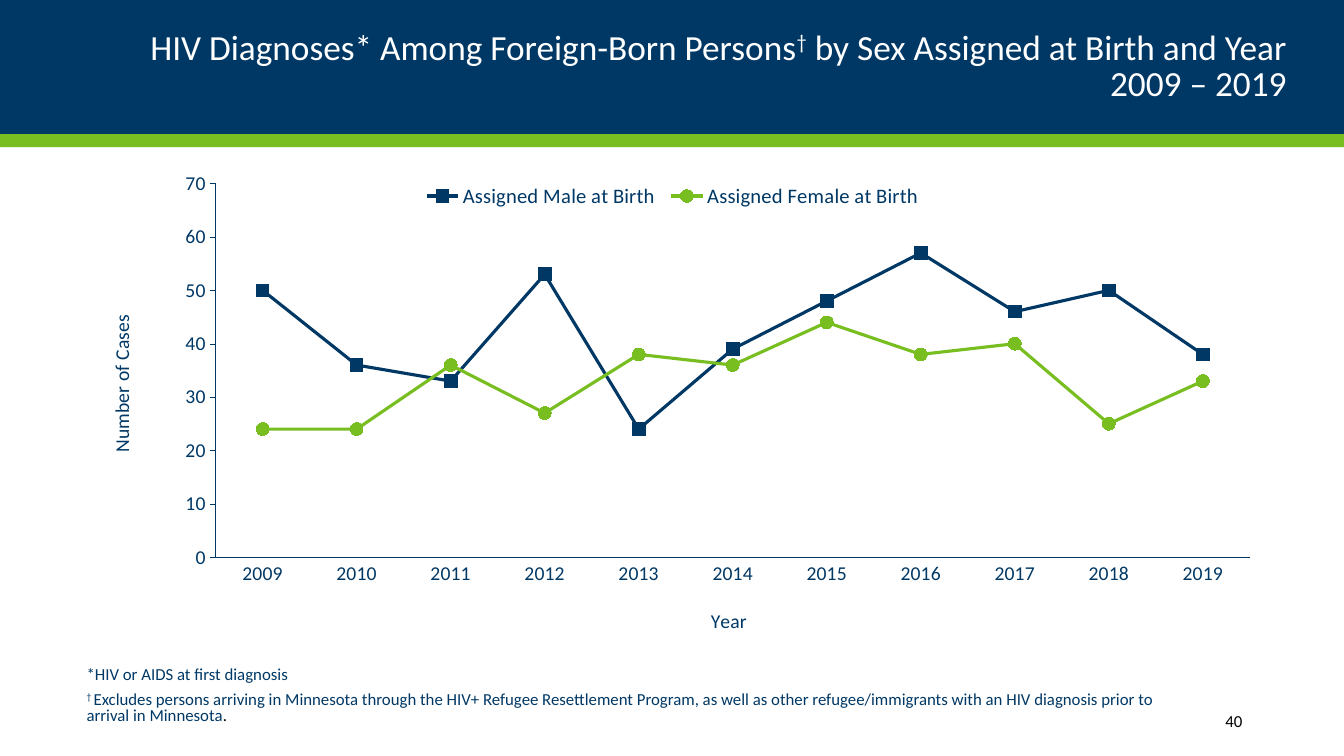
from lxml import etree
from pptx import Presentation
from pptx.chart.data import CategoryChartData
from pptx.dml.color import RGBColor
from pptx.enum.chart import XL_CHART_TYPE, XL_LEGEND_POSITION, XL_MARKER_STYLE, XL_TICK_MARK
from pptx.enum.shapes import MSO_SHAPE
from pptx.enum.text import MSO_ANCHOR, PP_ALIGN
from pptx.oxml.ns import qn
from pptx.util import Inches, Pt

RECTANGLE = MSO_SHAPE.RECTANGLE
MIDDLE = MSO_ANCHOR.MIDDLE
LEFT, RIGHT = PP_ALIGN.LEFT, PP_ALIGN.RIGHT
LINE_MARKERS = XL_CHART_TYPE.LINE_MARKERS
LEGEND_TOP = XL_LEGEND_POSITION.TOP
SQUARE, CIRCLE = XL_MARKER_STYLE.SQUARE, XL_MARKER_STYLE.CIRCLE
TICK_NONE, TICK_OUT = XL_TICK_MARK.NONE, XL_TICK_MARK.OUTSIDE

NAVY, GREEN, WHITE, BLACK = "003865", "78BE21", "FFFFFF", "000000"
FONT = "Calibri"
YEARS = [str(year) for year in range(2009, 2020)]
SERIES = [
    ("Assigned Male at Birth", [50, 36, 33, 53, 24, 39, 48, 57, 46, 50, 38], NAVY, SQUARE),
    ("Assigned Female at Birth", [24, 24, 36, 27, 38, 36, 44, 38, 40, 25, 33], GREEN, CIRCLE),
]


def color(value):
    return RGBColor.from_string(value)


def style_font(font, size, value):
    font.name, font.size, font.bold = FONT, Pt(size), False
    font.color.rgb = color(value)


def add_span(para, text, size, value, raised=False):
    span = para.add_run()
    span.text = text
    style_font(span.font, size, value)
    if raised:
        span.font._element.set("baseline", "30000")


def add_text_box(page, box, align, line_spacing=1.0):
    frame = page.shapes.add_textbox(*map(Inches, box)).text_frame
    frame.word_wrap = True
    frame.vertical_anchor = MIDDLE
    para = frame.paragraphs[0]
    para.alignment, para.line_spacing = align, line_spacing
    return frame


def add_band(page, box, fill):
    band = page.shapes.add_shape(RECTANGLE, *map(Inches, box))
    band.shadow.inherit = False
    band.fill.solid()
    band.fill.fore_color.rgb = color(fill)
    band.line.fill.background()


def add_header(page, box):
    left, top, width, height = box
    # Navy band with a green stripe under it
    add_band(page, box, NAVY)
    add_band(page, (left, top + height, width, 0.13), GREEN)
    # Title
    title_box = (left + 0.92, top + 0.17, width - 1.39, 1)
    para = add_text_box(page, title_box, RIGHT, 0.85).paragraphs[0]
    add_span(para, "HIV Diagnoses* Among Foreign-Born Persons", 25.2, WHITE)
    add_span(para, "†", 25.2, WHITE, raised=True)
    add_span(para, " by Sex Assigned at Birth and Year", 25.2, WHITE)
    para.add_line_break()
    add_span(para, "2009 – 2019", 25.2, WHITE)


def set_layout(parent, index, inner=False, **place):
    """Place a chart part by fractions of the chart frame."""
    for old in parent.findall(qn("c:layout")):
        parent.remove(old)
    layout = etree.Element(qn("c:layout"))
    manual = etree.SubElement(layout, qn("c:manualLayout"))
    if inner:
        etree.SubElement(manual, qn("c:layoutTarget")).set("val", "inner")
    for mode in ("xMode", "yMode"):
        etree.SubElement(manual, qn("c:" + mode)).set("val", "edge")
    for name, value in place.items():
        etree.SubElement(manual, qn("c:" + name)).set("val", str(value))
    parent.insert(index, layout)


def style_axis(axis, title, tick, x, y):
    axis.has_major_gridlines = False
    axis.major_tick_mark, axis.minor_tick_mark = tick, TICK_NONE
    style_font(axis.tick_labels.font, 14, NAVY)
    axis.format.line.color.rgb = color(NAVY)
    axis.format.line.width = Pt(0.25)
    para = axis.axis_title.text_frame.paragraphs[0]
    add_span(para, title, 14, NAVY)
    set_layout(axis.axis_title._element, 1, x=x, y=y)


def add_case_chart(page, box):
    data = CategoryChartData()
    data.categories = YEARS
    for name, values, _, _ in SERIES:
        data.add_series(name, values)
    chart = page.shapes.add_chart(LINE_MARKERS, *map(Inches, box), data).chart
    chart.has_title = False
    style_font(chart.font, 14, NAVY)
    set_layout(chart.element.find(".//" + qn("c:plotArea")), 0, inner=True,
               x=0.106, y=0.034, w=0.892, h=0.779)
    # Axes
    style_axis(chart.category_axis, "Year", TICK_NONE, 0.53, 0.91)
    value_axis = chart.value_axis
    style_axis(value_axis, "Number of Cases", TICK_OUT, 0.01, 0.3)
    value_axis.minimum_scale, value_axis.maximum_scale = 0, 70
    value_axis.major_unit = 10
    # Legend
    chart.has_legend = True
    legend = chart.legend
    legend.position = LEGEND_TOP
    legend.include_in_layout = False
    style_font(legend.font, 14.7, NAVY)
    set_layout(legend._element, 1, x=0.28, y=0.02, w=0.44, h=0.08)
    # Series
    chart.plots[0].vary_by_categories = False
    for series, (_, _, shade, symbol) in zip(chart.plots[0].series, SERIES):
        series.smooth = False
        series.format.line.color.rgb = color(shade)
        series.format.line.width = Pt(2.25)
        marker = series.marker
        marker.style, marker.size = symbol, 9
        marker.format.fill.solid()
        marker.format.fill.fore_color.rgb = color(shade)
        marker.format.line.color.rgb = color(shade)


def add_footnotes(page, box):
    frame = add_text_box(page, box, LEFT, 0.8)
    first, second = frame.paragraphs[0], frame.add_paragraph()
    second.line_spacing = 0.8
    for para in (first, second):
        para.space_before = Pt(6)
    add_span(first, "*HIV or AIDS at first diagnosis", 12, NAVY)
    add_span(second, "† ", 12, NAVY, raised=True)
    add_span(second, "Excludes persons arriving in Minnesota through the HIV+ Refugee "
             "Resettlement Program, as well as other refugee/immigrants with an HIV "
             "diagnosis prior to arrival in Minnesota", 12, NAVY)
    add_span(second, ".", 12, BLACK)


def add_page_number(page, box):
    add_span(add_text_box(page, box, RIGHT).paragraphs[0], "40", 12, BLACK)


def main():
    deck = Presentation()
    deck.slide_width, deck.slide_height = Inches(13.33), Inches(7.5)
    page = deck.slides.add_slide(deck.slide_layouts[6])
    add_header(page, (0, 0, 13.33, 1.33))
    add_case_chart(page, (0.92, 1.66, 11.5, 4.76))
    add_footnotes(page, (0.76, 6.34, 10.95, 1.13))
    add_page_number(page, (10.82, 6.95, 1.6, 0.4))
    deck.save("out.pptx")


if __name__ == "__main__":
    main()
